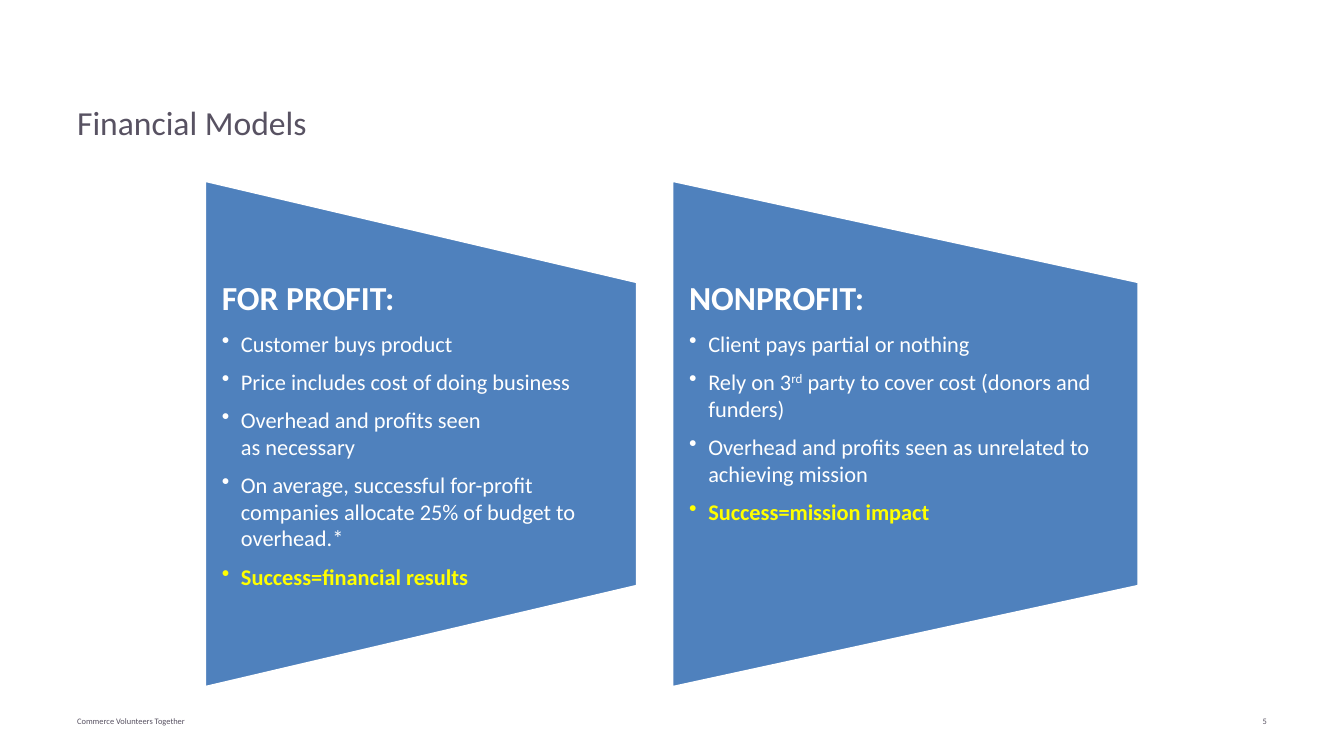
from pptx import Presentation
from pptx.dml.color import RGBColor
from pptx.enum.shapes import MSO_SHAPE
from pptx.enum.text import MSO_ANCHOR, PP_ALIGN
from pptx.util import Inches, Pt
from lxml import etree

TRAPEZOID = MSO_SHAPE.FLOWCHART_MANUAL_OPERATION
TOP, MIDDLE = MSO_ANCHOR.TOP, MSO_ANCHOR.MIDDLE
LEFT, RIGHT = PP_ALIGN.LEFT, PP_ALIGN.RIGHT
DRAWING = "{http://schemas.openxmlformats.org/drawingml/2006/main}"

THEME = {
    "font": "Calibri",
    "ink": RGBColor.from_string("585262"),
    "panel": RGBColor.from_string("4F81BD"),
    "white": RGBColor.from_string("FFFFFF"),
    "accent": RGBColor.from_string("FFFF00"),
    "heading": 24,
    "body": 16,
    "footer": 6,
}

presentation = Presentation()
presentation.slide_width = Inches(13.33)
presentation.slide_height = Inches(7.5)
slide = presentation.slides.add_slide(presentation.slide_layouts[6])
WIDTH, HEIGHT = 13.33, 7.5
MARGIN = WIDTH / 20


def add_text_box(left, top, width, height, anchor=TOP, side_inset=0.1, end_inset=0.05):
    box = slide.shapes.add_textbox(Inches(left), Inches(top), Inches(width), Inches(height))
    frame = box.text_frame
    frame.word_wrap = True
    frame.vertical_anchor = anchor
    frame.margin_left = frame.margin_right = Inches(side_inset)
    frame.margin_top = frame.margin_bottom = Inches(end_inset)
    return frame


def write(paragraph, text, size, color, bold=False, align=LEFT, after=0, spacing=1.0, bullet=False):
    paragraph.alignment = align
    paragraph.line_spacing = spacing
    paragraph.space_after = Pt(after)
    if bullet:
        properties = paragraph._p.get_or_add_pPr()
        properties.set("marL", str(Inches(0.19)))
        properties.set("indent", str(-Inches(0.19)))
        etree.SubElement(properties, DRAWING + "buChar", char="•")
    for line_index, line in enumerate(text.split("\n")):
        if line_index:
            paragraph.add_line_break()
        for part_index, part in enumerate(line.split("^")):
            run = paragraph.add_run()
            run.text = part
            run.font.name = THEME["font"]
            run.font.size = Pt(size)
            run.font.bold = bold
            run.font.color.rgb = color
            if part_index % 2:
                run._r.get_or_add_rPr().set("baseline", "30000")


title = add_text_box(MARGIN, 0.96, WIDTH - 2 * MARGIN, 0.49)
write(title.paragraphs[0], "Financial Models", THEME["heading"], THEME["ink"])

FOOTER_WIDTH, NUMBER_WIDTH = 8.11, 3.11
footers = [
    ("Commerce Volunteers Together", MARGIN, FOOTER_WIDTH, LEFT),
    ("5", WIDTH - MARGIN - NUMBER_WIDTH, NUMBER_WIDTH, RIGHT),
]
for text, left, width, align in footers:
    footer = add_text_box(left, 6.95, width, 0.4, anchor=MIDDLE)
    write(footer.paragraphs[0], text, THEME["footer"], THEME["ink"], align=align)

PANEL_TOP, PANEL_HEIGHT = 1.79, 5.03
panels = [
    (2.03, 4.29, "FOR PROFIT:", [
        "Customer buys product",
        "Price includes cost of doing business",
        "Overhead and profits seen \nas necessary",
        "On average, successful for-profit companies allocate 25% of budget to overhead.*",
    ], "Success=financial results"),
    (WIDTH / 2, 4.63, "NONPROFIT:", [
        "Client pays partial or nothing",
        "Rely on 3^rd^ party to cover cost (donors and funders)",
        "Overhead and profits seen as unrelated to achieving mission",
    ], "Success=mission impact"),
]
for left, width, heading, points, success in panels:
    turn = (PANEL_HEIGHT - width) / 2
    panel = slide.shapes.add_shape(
        TRAPEZOID, Inches(left - turn), Inches(PANEL_TOP + turn), Inches(PANEL_HEIGHT), Inches(width))
    panel.rotation = 270
    panel.shadow.inherit = False
    panel.fill.solid()
    panel.fill.fore_color.rgb = THEME["panel"]
    panel.line.color.rgb = THEME["white"]
    panel.line.width = Pt(2)

    frame = add_text_box(left, PANEL_TOP + PANEL_HEIGHT / 5, width, PANEL_HEIGHT * 3 / 5,
                         side_inset=0.17, end_inset=0)
    write(frame.paragraphs[0], heading, THEME["heading"], THEME["white"], bold=True, after=8.4, spacing=0.9)
    for point in points:
        write(frame.add_paragraph(), point, THEME["body"], THEME["white"], after=8, bullet=True)
    write(frame.add_paragraph(), success, THEME["body"], THEME["accent"], bold=True, after=8, bullet=True)

presentation.save("out.pptx")
